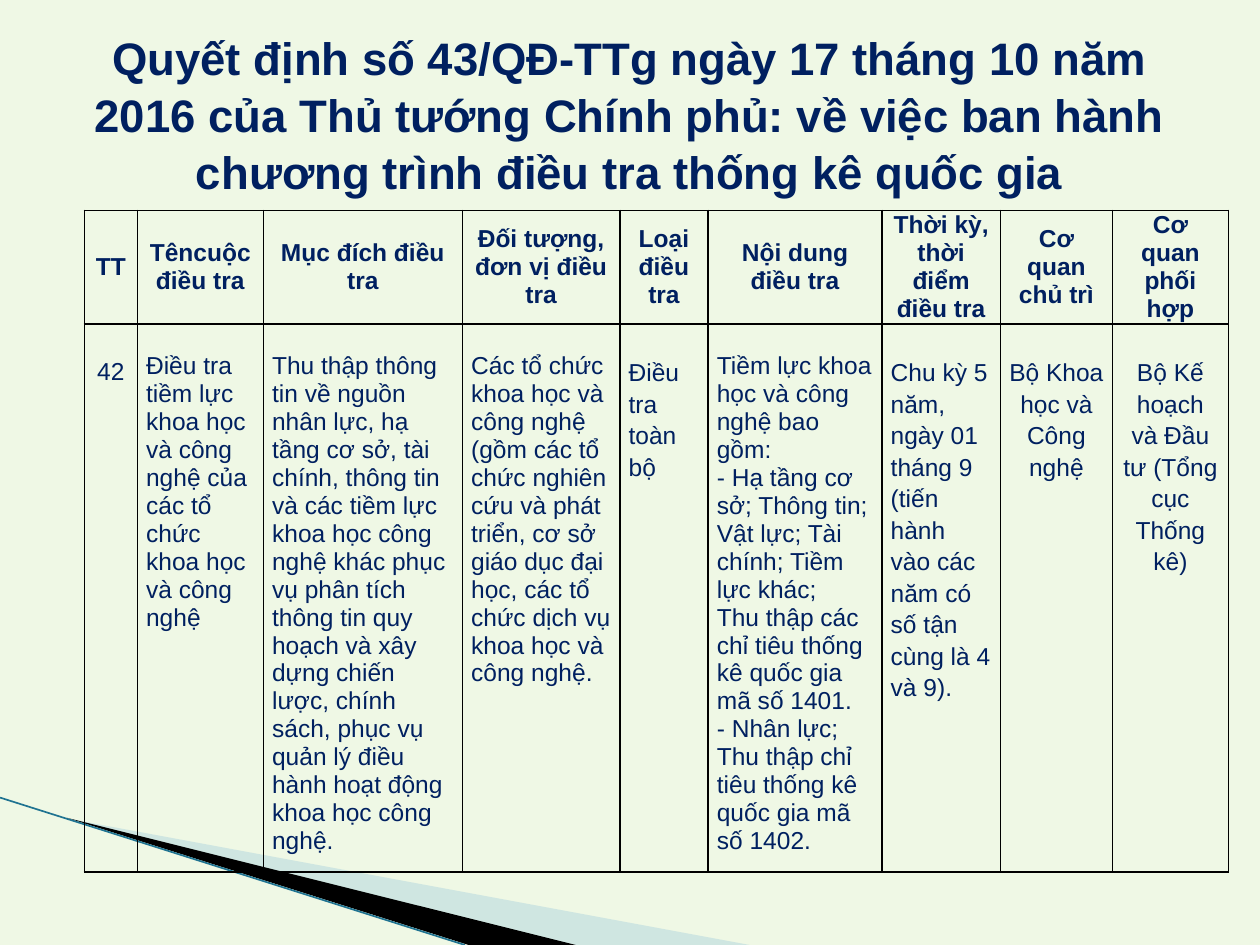
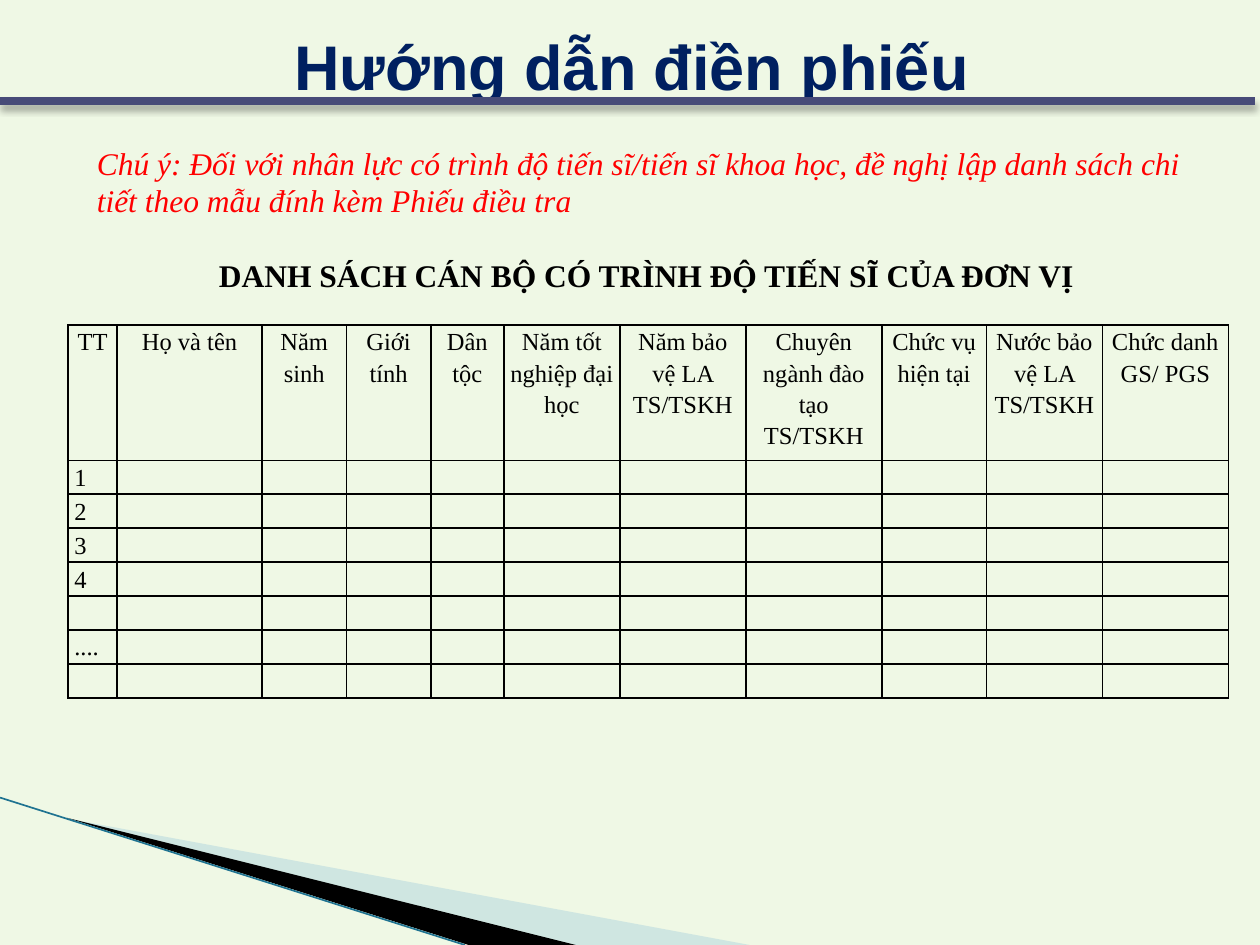
from lxml import etree
from pptx import Presentation
from pptx.dml.color import RGBColor
from pptx.enum.shapes import MSO_CONNECTOR
from pptx.enum.text import MSO_ANCHOR, PP_ALIGN
from pptx.oxml.ns import qn
from pptx.util import Inches, Pt

LINE = MSO_CONNECTOR.STRAIGHT
MID, TOP = MSO_ANCHOR.MIDDLE, MSO_ANCHOR.TOP
LEFT, MIDST = PP_ALIGN.LEFT, PP_ALIGN.CENTER
SANS, SERIF = "Arial", "Times New Roman"
NAVY, BLACK, RED = "002060", "000000", "FF0000"
PALE, AQUA, TEAL, SLATE = "EFF8E5", "A0CBDC", "1F7391", "474B78"
hue = RGBColor.from_string


def put(frame, text, size, font, color, align=LEFT, space=None, bold=False, italic=False):
    para = frame.paragraphs[0]
    if para.runs:
        para = frame.add_paragraph()
    para.alignment = align
    if space:
        para.line_spacing = space
    run = para.add_run()
    run.text = text
    run.font.size = Pt(size)
    run.font.name = font
    run.font.bold = bold
    run.font.italic = italic
    run.font.color.rgb = hue(color)
    return para


def grid(slide, left, top, cols, rows, side):
    frame = slide.shapes.add_table(len(rows), len(cols), Inches(left), Inches(top),
                                   Inches(sum(cols)), Inches(sum(rows)))
    table = frame.table
    table.first_row = table.horz_banding = False
    for col, width in zip(table.columns, cols):
        col.width = Inches(width)
    for row, height in zip(table.rows, rows):
        row.height = Inches(height)
    for cell in table.iter_cells():
        cell.margin_left = cell.margin_right = Inches(side)
        cell.margin_top = cell.margin_bottom = 0
        props = cell._tc.get_or_add_tcPr()
        for edge in ("a:lnL", "a:lnR", "a:lnT", "a:lnB"):
            line = etree.SubElement(props, qn(edge), w=str(Pt(1)))
            fill = etree.SubElement(line, qn("a:solidFill"))
            etree.SubElement(fill, qn("a:srgbClr"), val=BLACK)
        cell.fill.background()
    return table


deck = Presentation()
deck.slide_width, deck.slide_height = Inches(10), Inches(7.5)

wedges = [
    ([(0.55, 6.5), (5.95, 7.5), (4.56, 7.5)], AQUA, 40),
    ([(0.53, 6.49), (4.57, 7.5), (3.72, 7.5)], BLACK, 100),
]
for _ in range(2):
    slide = deck.slides.add_slide(deck.slide_layouts[6])
    slide.background.fill.solid()
    slide.background.fill.fore_color.rgb = hue(PALE)
    for points, color, alpha in wedges:
        spots = [(Inches(x), Inches(y)) for x, y in points]
        pen = slide.shapes.build_freeform(*spots[0])
        pen.add_line_segments(spots[1:], close=True)
        wedge = pen.convert_to_shape()
        wedge.shadow.inherit = False
        wedge.line.fill.background()
        wedge.fill.solid()
        wedge.fill.fore_color.rgb = hue(color)
        if alpha < 100:
            tint = wedge._element.spPr.find(".//" + qn("a:srgbClr"))
            etree.SubElement(tint, qn("a:alpha"), val=str(alpha * 1000))
    streak = slide.shapes.add_connector(LINE, 0, Inches(6.33), Inches(3.69), Inches(7.5))
    streak.line.color.rgb = hue(TEAL)
    streak.line.width = Pt(0.95)
    etree.SubElement(streak._element.spPr, qn("a:effectLst"))

plan, guide = deck.slides

titles = [
    (plan, (0.5, 0.42, 9, 0.95), 26, 1.05,
     "Quyết định số 43/QĐ-TTg ngày 17 tháng 10 năm 2016 của Thủ tướng Chính phủ: "
     "về việc ban hành chương trình điều tra thống kê quốc gia"),
    (guide, (0.03, 0, 9.97, 0.8), 36, 1.4, "Hướng dẫn điền phiếu"),
]
for slide, box, size, space, text in titles:
    frame = slide.shapes.add_textbox(*map(Inches, box)).text_frame
    frame.word_wrap = True
    frame.vertical_anchor = MID
    put(frame, text, size, SANS, NAVY, MIDST, space, bold=True)

survey = [
    ("TT", 0.42, MIDST, 11.7, 0.33, ["42"]),
    ("Têncuộc điều tra", 1, LEFT, 16, 0.22,
     ["Điều tra tiềm lực khoa học và công nghệ của các tổ chức khoa học và công nghệ"]),
    ("Mục đích điều tra", 1.58, LEFT, 16, 0.22,
     ["Thu thập thông tin về nguồn nhân lực, hạ tầng cơ sở, tài chính, thông tin và các "
      "tiềm lực khoa học công nghệ khác phục vụ phân tích thông tin quy hoạch và xây dựng "
      "chiến lược, chính sách, phục vụ quản lý điều hành hoạt động khoa học công nghệ."]),
    ("Đối tượng, đơn vị điều tra", 1.25, LEFT, 16, 0.22,
     ["Các tổ chức khoa học và công nghệ (gồm các tổ chức nghiên cứu và phát triển, cơ sở "
      "giáo dục đại học, các tổ chức dịch vụ khoa học và công nghệ."]),
    ("Loại điều tra", 0.7, LEFT, 18, 0.25, ["Điều tra toàn bộ"]),
    ("Nội dung điều tra", 1.38, LEFT, 16, 0.22,
     ["Tiềm lực khoa học và công nghệ bao gồm:",
      "- Hạ tầng cơ sở; Thông tin; Vật lực; Tài chính; Tiềm lực khác;",
      "Thu thập các chỉ tiêu thống kê quốc gia mã số 1401.",
      "- Nhân lực;",
      "Thu thập chỉ tiêu thống kê quốc gia mã số 1402."]),
    ("Thời kỳ, thời điểm điều tra", 0.94, LEFT, 18, 0.25,
     ["Chu kỳ 5 năm, ngày 01 tháng 9 (tiến hành vào các năm có số tận cùng là 4 và 9)."]),
    ("Cơ quan chủ trì", 0.89, MIDST, 18, 0.25, ["Bộ Khoa học và Công nghệ"]),
    ("Cơ quan phối hợp", 0.92, MIDST, 18, 0.25,
     ["Bộ Kế hoạch và Đầu tư (Tổng cục Thống kê)"]),
]
table = grid(plan, 0.67, 1.67, [item[1] for item in survey], [0.9, 4.35], 0.07)
for col, (head, _, align, space, inset, texts) in enumerate(survey):
    cell = table.cell(0, col)
    cell.vertical_anchor = MID
    put(cell.text_frame, head, 14, SANS, NAVY, MIDST, Pt(16), bold=True)
    cell = table.cell(1, col)
    cell.vertical_anchor = TOP
    cell.margin_top = Inches(inset)
    for text in texts:
        put(cell.text_frame, text, 14, SANS, NAVY, align, Pt(space))

rule = guide.shapes.add_connector(LINE, 0, Inches(0.8), Inches(9.96), Inches(0.8))
rule.line.color.rgb = hue(SLATE)
rule.line.width = Pt(4.33)
glow = etree.SubElement(rule._element.spPr, qn("a:effectLst"))
shade = etree.SubElement(glow, qn("a:outerShdw"), blurRad=str(Pt(4)), dist=str(Pt(3)),
                         dir="5400000", rotWithShape="0")
tint = etree.SubElement(shade, qn("a:srgbClr"), val=BLACK)
etree.SubElement(tint, qn("a:alpha"), val="35000")

note = guide.shapes.add_textbox(Inches(0.67), Inches(1.08), Inches(8.92), Inches(1.31))
frame = note.text_frame
frame.word_wrap = True
frame.vertical_anchor = MID
put(frame, "Chú ý: Đối với nhân lực có trình độ tiến sĩ/tiến sĩ khoa học, đề nghị lập danh sách "
    "chi tiết theo mẫu đính kèm Phiếu điều tra", 18, SERIF, RED, italic=True)
para = put(frame, "DANH SÁCH CÁN BỘ CÓ TRÌNH ĐỘ TIẾN SĨ CỦA ĐƠN VỊ", 18, SERIF, BLACK, MIDST,
           bold=True)
para.space_before = Pt(21)

staff = [
    ("TT", 0.39), ("Họ và tên", 1.15), ("Năm sinh", 0.67), ("Giới tính", 0.67),
    ("Dân tộc", 0.58), ("Năm tốt nghiệp đại học", 0.92), ("Năm bảo vệ LA TS/TSKH", 1),
    ("Chuyên ngành đào tạo TS/TSKH", 1.08), ("Chức vụ hiện tại", 0.83),
    ("Nước bảo vệ LA TS/TSKH", 0.92), ("Chức danh GS/ PGS", 1),
]
marks = ["1", "2", "3", "4", "", "....", ""]
table = grid(guide, 0.54, 2.58, [width for _, width in staff], [1.07] + [0.27] * len(marks), 0.05)
for col, (head, _) in enumerate(staff):
    put(table.cell(0, col).text_frame, head, 14, SERIF, BLACK, MIDST, 1.15)
for row, mark in enumerate(marks, 1):
    if mark:
        put(table.cell(row, 0).text_frame, mark, 14, SERIF, BLACK, LEFT, 1.15)
for cell in table.iter_cells():
    if not cell.text:
        etree.SubElement(cell.text_frame.paragraphs[0]._p, qn("a:endParaRPr"), sz="1400")

deck.save("out.pptx")
